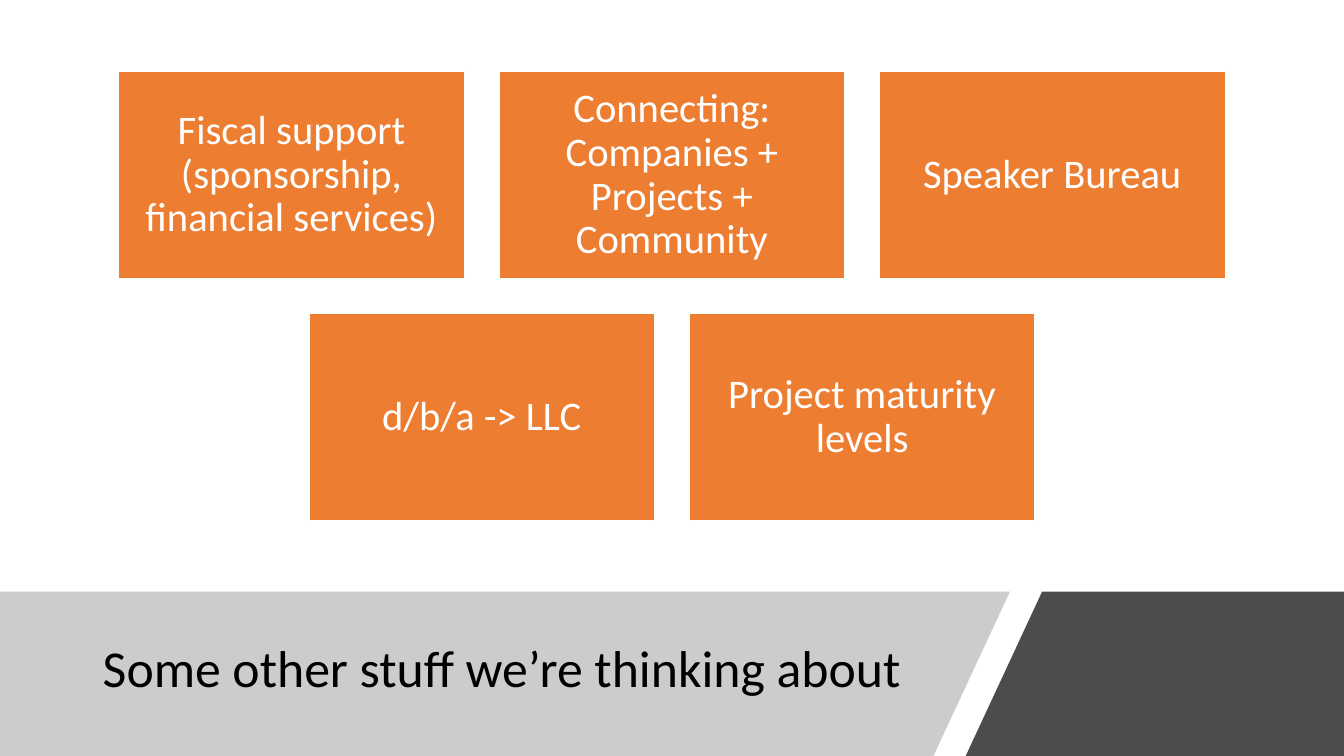
from dataclasses import dataclass

from lxml.etree import SubElement
from pptx import Presentation
from pptx.dml.color import RGBColor
from pptx.enum.shapes import MSO_SHAPE
from pptx.enum.text import MSO_ANCHOR, MSO_AUTO_SIZE, PP_ALIGN
from pptx.oxml.ns import qn
from pptx.util import Pt


@dataclass(frozen=True)
class Theme:
    """Colours, font and type sizes of the slide."""
    font: str = "Calibri"
    title_size: int = 37
    card_size: int = 29
    white: RGBColor = RGBColor(0xFF, 0xFF, 0xFF)
    black: RGBColor = RGBColor(0, 0, 0)
    grey: RGBColor = RGBColor(0x80, 0x80, 0x80)
    orange: RGBColor = RGBColor(0xED, 0x7D, 0x31)


THEME = Theme()
SLIDE_WIDTH, SLIDE_HEIGHT = 960, 540
BAND_TOP = 422.6
CARD_WIDTH, CARD_HEIGHT, CARD_GAP = 247, 148.2, 24.7
CARDS_TOP = 50.9
CARD_INSET = 8.6
CARD_ROWS = (
    ("Fiscal support (sponsorship, financial services)",
     "Connecting: Companies + Projects + Community",
     "Speaker Bureau"),
    ("d/b/a -> LLC", "Project maturity levels"),
)


def style_text(frame, size, color, align):
    """Format every paragraph of a vertically centred text frame."""
    frame.word_wrap = True
    frame.auto_size = MSO_AUTO_SIZE.NONE
    frame.vertical_anchor = MSO_ANCHOR.MIDDLE
    for paragraph in frame.paragraphs:
        paragraph.alignment = align
        paragraph.line_spacing = 0.9
        for run in paragraph.runs:
            run.font.name = THEME.font
            run.font.size = Pt(size)
            run.font.color.rgb = color


def add_band(slide, corners, color, opacity):
    """Draw a translucent polygon through the corners, behind the title."""
    first, *rest = [(Pt(x), Pt(y)) for x, y in corners]
    outline = slide.shapes.build_freeform(*first)
    outline.add_line_segments(rest, close=True)
    band = outline.convert_to_shape()
    band.shadow.inherit = False
    band.fill.solid()
    band.fill.fore_color.rgb = color
    band.line.fill.background()
    tint = band.fill._xPr.find(qn("a:solidFill"))[0]
    SubElement(tint, qn("a:alpha"), val=str(opacity * 1000))
    slide.shapes.title._element.addprevious(band._element)


def add_title(slide, wording):
    """Place the title on the lower band."""
    title = slide.shapes.title
    title.left, title.top = Pt(66.2), Pt(435.6)
    title.width, title.height = Pt(607.7), Pt(86.4)
    title.text_frame.text = wording
    style_text(title.text_frame, THEME.title_size, THEME.black, PP_ALIGN.LEFT)


def add_card(slide, left, top, wording):
    """Draw one orange card with centred wording."""
    card = slide.shapes.add_shape(
        MSO_SHAPE.RECTANGLE, Pt(left), Pt(top), Pt(CARD_WIDTH), Pt(CARD_HEIGHT))
    card.shadow.inherit = False
    card.fill.solid()
    card.fill.fore_color.rgb = THEME.orange
    card.line.color.rgb = THEME.white
    card.line.width = Pt(1)
    frame = card.text_frame
    frame.margin_left = frame.margin_right = Pt(CARD_INSET)
    frame.margin_top = frame.margin_bottom = Pt(CARD_INSET)
    frame.text = wording
    style_text(frame, THEME.card_size, THEME.white, PP_ALIGN.CENTER)


def add_card_row(slide, top, wordings):
    """Centre a row of evenly spaced cards on the slide."""
    pitch = CARD_WIDTH + CARD_GAP
    left = (SLIDE_WIDTH - len(wordings) * pitch + CARD_GAP) / 2
    for column, wording in enumerate(wordings):
        add_card(slide, left + column * pitch, top, wording)


def main():
    """Build and save the slide."""
    deck = Presentation()
    deck.slide_width, deck.slide_height = Pt(SLIDE_WIDTH), Pt(SLIDE_HEIGHT)
    slide = deck.slides.add_slide(deck.slide_layouts[5])
    add_band(slide, ((0, BAND_TOP), (721.4, BAND_TOP),
                     (666.8, SLIDE_HEIGHT), (0, SLIDE_HEIGHT)), THEME.grey, 40)
    add_band(slide, ((744.4, BAND_TOP), (SLIDE_WIDTH, BAND_TOP),
                     (SLIDE_WIDTH, SLIDE_HEIGHT), (689.8, SLIDE_HEIGHT)),
             THEME.black, 70)
    add_title(slide, "Some other stuff we’re thinking about")
    for row, wordings in enumerate(CARD_ROWS):
        add_card_row(slide, CARDS_TOP + row * (CARD_HEIGHT + CARD_GAP), wordings)
    deck.save("out.pptx")


if __name__ == "__main__":
    main()
